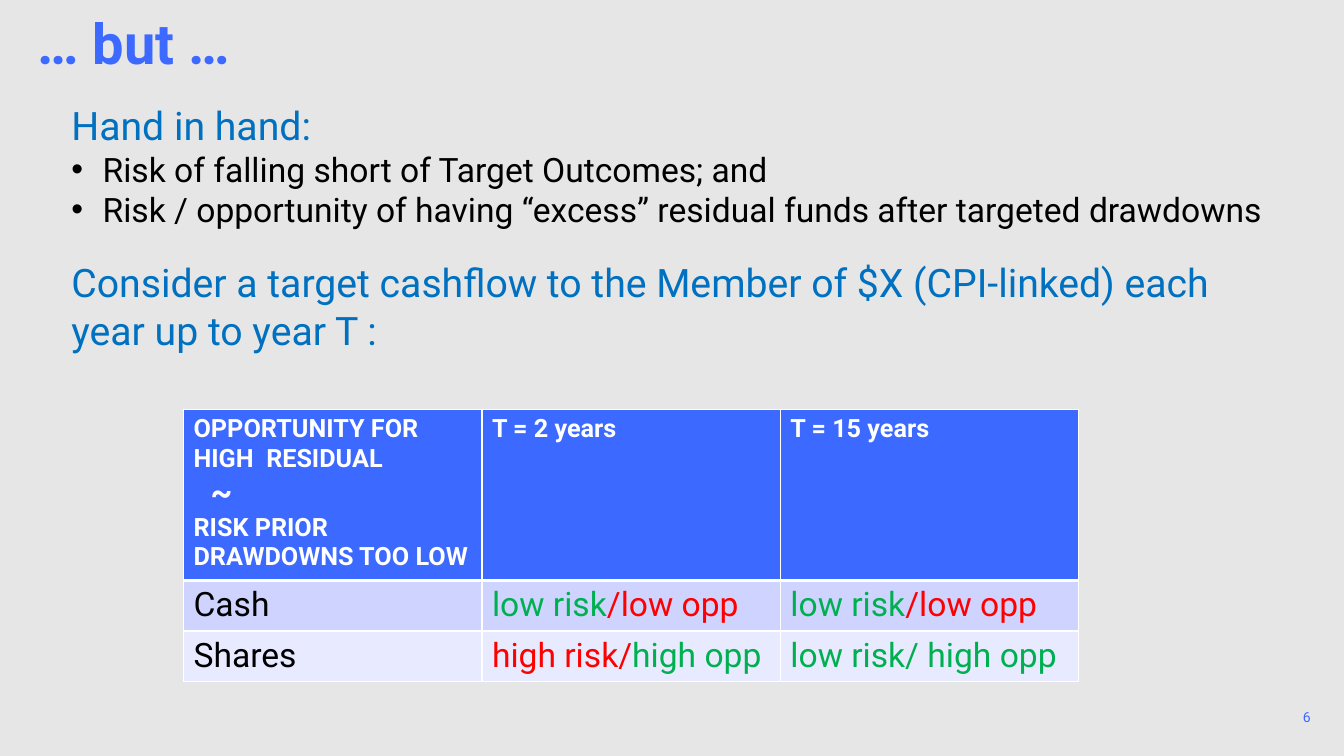
from lxml.etree import SubElement
from pptx import Presentation
from pptx.dml.color import RGBColor
from pptx.enum.text import MSO_ANCHOR, PP_ALIGN
from pptx.oxml.ns import qn
from pptx.util import Inches, Pt

FONT = "Roboto"
BLUE, HEADING, BLACK, WHITE = "3C69FF", "0070C0", "000000", "FFFFFF"
GREEN, RED = "00B050", "FF0000"


def color(value):
    """Turn a hex string into a colour."""
    return RGBColor.from_string(value)


def add_run(paragraph, text, size, fill, bold=False):
    """Append one formatted run to a paragraph."""
    run = paragraph.add_run()
    run.text = text
    run.font.name = FONT
    run.font.size = Pt(size)
    run.font.bold = bold
    run.font.color.rgb = color(fill)


def next_paragraph(frame, index):
    """Return the first paragraph of a frame, or a new one after it."""
    return frame.paragraphs[0] if index == 0 else frame.add_paragraph()


def set_indent(paragraph, margin, first_line=0):
    """Set the left margin and first-line indent of a paragraph in inches."""
    properties = paragraph._p.get_or_add_pPr()
    properties.set("marL", str(Inches(margin)))
    properties.set("indent", str(Inches(first_line)))
    return properties


def add_text_frame(slide, box, inset=True):
    """Add a wrapping text box and return its frame."""
    frame = slide.shapes.add_textbox(*map(Inches, box)).text_frame
    frame.word_wrap = True
    if not inset:
        frame.margin_left = frame.margin_right = 0
        frame.margin_top = frame.margin_bottom = 0
    return frame


def add_title(slide, box, text):
    """Add the slide title."""
    paragraph = add_text_frame(slide, box, inset=False).paragraphs[0]
    paragraph.line_spacing = 0.9
    add_run(paragraph, text, 40, BLUE, bold=True)


def add_body(slide, box, sections):
    """Add headings, each followed by its bullets."""
    frame = add_text_frame(slide, box)
    for index, (heading, bullets) in enumerate(sections):
        paragraph = next_paragraph(frame, index)
        if index:
            paragraph.space_before = Pt(21)
        add_run(paragraph, heading, 28, HEADING)
        for bullet in bullets:
            paragraph = frame.add_paragraph()
            properties = set_indent(paragraph, 0.31, -0.31)
            SubElement(properties, qn("a:buFont"), typeface="Arial")
            SubElement(properties, qn("a:buChar"), char="•")
            add_run(paragraph, bullet, 24, BLACK)


def style_cell(cell, fill, top, bottom):
    """Give a cell white borders and a plain fill."""
    properties = cell._tc.get_or_add_tcPr()
    for side, width in (("L", 1), ("R", 1), ("T", top), ("B", bottom)):
        line = SubElement(properties, qn(f"a:ln{side}"), w=str(Pt(width)))
        solid = SubElement(line, qn("a:solidFill"))
        SubElement(solid, qn("a:srgbClr"), val=WHITE)
    cell.fill.solid()
    cell.fill.fore_color.rgb = color(fill)


def add_outcome_table(slide, box, headers, rows):
    """Add the table of risk and opportunity by horizon."""
    left, top, width, height = map(Inches, box)
    table = slide.shapes.add_table(
        len(rows) + 1, len(headers), left, top, width, height).table
    body_height = Inches(0.5)
    table.rows[0].height = height - body_height * len(rows)
    for column, lines in enumerate(headers):
        cell = table.cell(0, column)
        style_cell(cell, BLUE, 1, 3)
        for index, (text, size, margin) in enumerate(lines):
            paragraph = next_paragraph(cell.text_frame, index)
            set_indent(paragraph, margin)
            add_run(paragraph, text, size, WHITE, bold=True)
    for row, (fill, cells) in enumerate(rows, start=1):
        table.rows[row].height = body_height
        for column, runs in enumerate(cells):
            cell = table.cell(row, column)
            style_cell(cell, fill, 3 if row == 1 else 1, 1)
            for text, text_color in runs:
                add_run(cell.text_frame.paragraphs[0], text, 24, text_color)


def add_page_number(slide, box, number):
    """Add the page number in the lower right corner."""
    frame = add_text_frame(slide, box, inset=False)
    frame.vertical_anchor = MSO_ANCHOR.BOTTOM
    frame.paragraphs[0].alignment = PP_ALIGN.RIGHT
    add_run(frame.paragraphs[0], number, 10, BLUE)


def main():
    """Build the slide and save it."""
    presentation = Presentation()
    presentation.slide_width = Inches(13.33)
    presentation.slide_height = Inches(7.5)
    slide = presentation.slides.add_slide(presentation.slide_layouts[6])
    slide.background.fill.solid()
    slide.background.fill.fore_color.rgb = color("E6E6E6")

    add_title(slide, (0.37, 0.16, 5.91, 0.61), "… but …")
    add_body(slide, (0.61, 0.96, 12.11, 2.96), [
        ("Hand in hand:", [
            "Risk of falling short of Target Outcomes; and",
            "Risk / opportunity of having “excess” residual funds after targeted drawdowns",
        ]),
        ("Consider a target cashflow to the Member of $X (CPI-linked) each year up to year T :", []),
    ])
    headers = [
        [("OPPORTUNITY FOR HIGH  RESIDUAL", 18, 0), ("~", 24, 0.17),
         ("RISK PRIOR DRAWDOWNS TOO LOW", 18, 0)],
        [("T = 2 years", 18, 0)],
        [("T = 15 years", 18, 0)],
    ]
    low_low = [("low risk", GREEN), ("/low opp", RED)]
    rows = [
        ("CED4FF", [[("Cash", BLACK)], low_low, low_low]),
        ("E8EBFF", [[("Shares", BLACK)],
                    [("high risk/", RED), ("high opp", GREEN)],
                    [("low risk/ high opp", GREEN)]]),
    ]
    add_outcome_table(slide, (1.82, 4.06, 8.88, 2.7), headers, rows)
    add_page_number(slide, (12.54, 7, 0.46, 0.2), "6")
    presentation.save("out.pptx")


if __name__ == "__main__":
    main()
